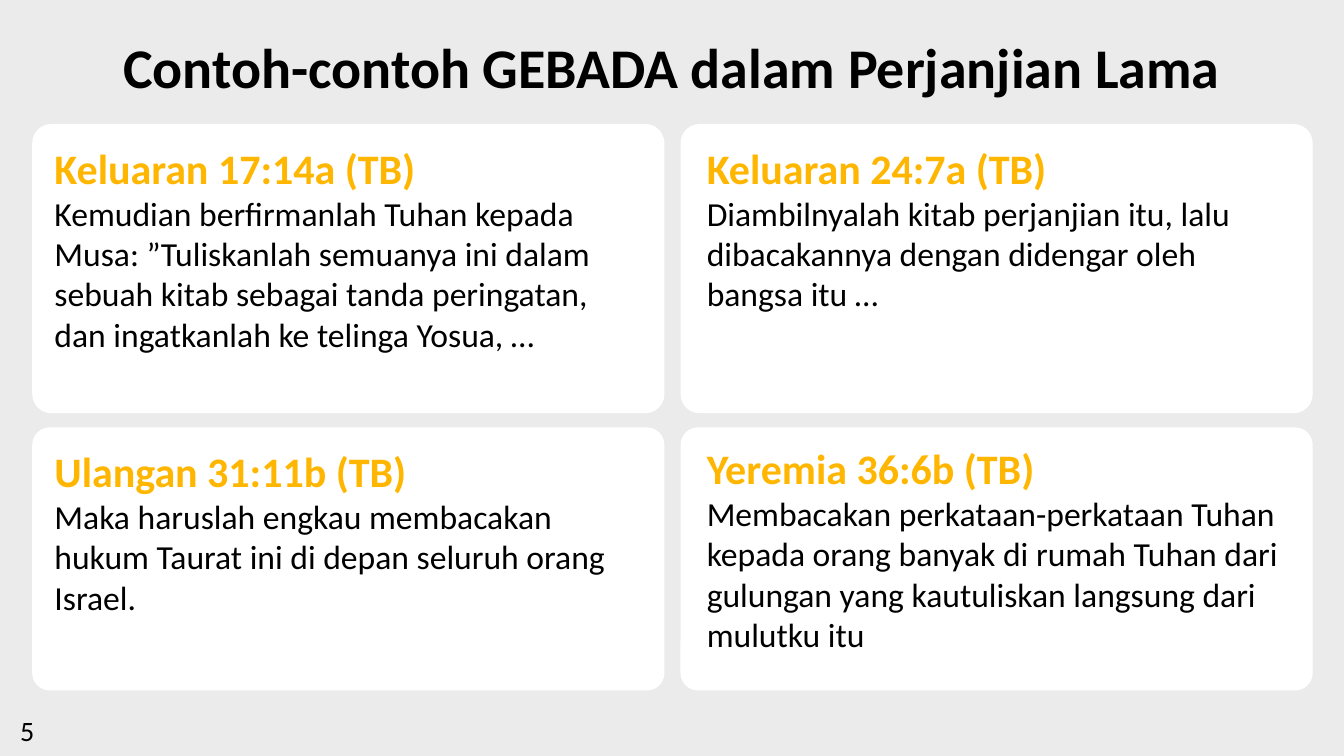
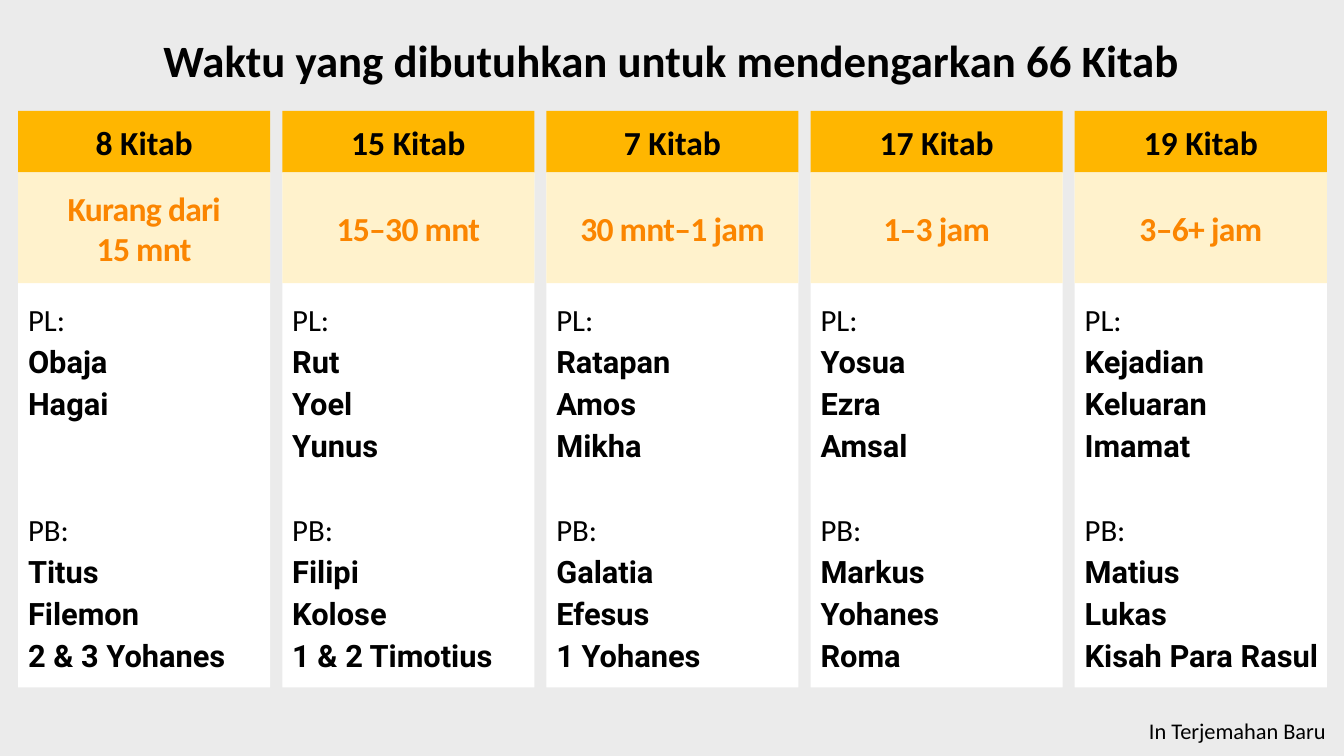
"""Build two slides on hearing Scripture: Old Testament examples and listening times."""
import dataclasses

import pptx
import pptx.dml.color
import pptx.enum.shapes
import pptx.enum.text
import pptx.util

Inches = pptx.util.Inches
Pt = pptx.util.Pt
Align = pptx.enum.text.PP_ALIGN
Anchor = pptx.enum.text.MSO_ANCHOR
Shape = pptx.enum.shapes.MSO_SHAPE


@dataclasses.dataclass(frozen=True)
class Theme:
    font: str = "Calibri"
    book_font: str = "Roboto"
    background: str = "EBEBEB"
    card: str = "FFFFFF"
    ink: str = "000000"
    gold: str = "FFB600"
    cream: str = "FFF2CC"
    orange: str = "FB8500"
    title_size: int = 40
    small_title_size: int = 32
    reference_size: int = 30
    body_size: int = 24
    book_size: int = 22
    page_size: int = 20
    note_size: int = 16
    book_line: int = 30
    note_line: int = 36


class Deck:
    def __init__(self, theme):
        self.theme = theme
        self.presentation = pptx.Presentation()
        self.presentation.slide_width = Inches(13.33)
        self.presentation.slide_height = Inches(7.5)
        self.slide = None

    def color(self, value):
        return pptx.dml.color.RGBColor.from_string(value)

    def new_slide(self, title, size):
        self.slide = self.presentation.slides.add_slide(self.presentation.slide_layouts[6])
        background = self.slide.background.fill
        background.solid()
        background.fore_color.rgb = self.color(self.theme.background)
        heading = self.text_frame(0.25, 0.32, 12.82, size / 60)
        self.paragraph(heading, title, size, bold=True, align=Align.CENTER)

    def panel(self, left, top, width, height, fill, rounding=0):
        preset = Shape.ROUNDED_RECTANGLE if rounding else Shape.RECTANGLE
        panel = self.slide.shapes.add_shape(
            preset, Inches(left), Inches(top), Inches(width), Inches(height))
        if rounding:
            panel.adjustments[0] = rounding
        panel.shadow.inherit = False
        panel.fill.solid()
        panel.fill.fore_color.rgb = self.color(fill)
        panel.line.fill.background()
        return panel

    def text_frame(self, left, top, width, height, indent=0):
        frame = self.slide.shapes.add_textbox(
            Inches(left), Inches(top), Inches(width), Inches(height)).text_frame
        frame.word_wrap = True
        frame.margin_left = Inches(indent)
        frame.margin_top = frame.margin_right = frame.margin_bottom = 0
        return frame

    def paragraph(self, frame, text, size, color=None, bold=False, align=Align.LEFT,
                  font=None, line=None, before=0, tracking=0):
        first = frame.paragraphs[0]
        paragraph = first if not first.runs else frame.add_paragraph()
        run = paragraph.add_run()
        run.text = text
        if tracking:
            run._r.get_or_add_rPr().set("spc", str(int(tracking * 100)))
        paragraph.alignment = align
        paragraph.font.name = font or self.theme.font
        paragraph.font.size = Pt(size)
        paragraph.font.bold = bold
        paragraph.font.color.rgb = self.color(color or self.theme.ink)
        if line:
            paragraph.line_spacing = Pt(line)
        if before:
            paragraph.space_before = Pt(before)

    def band(self, left, top, width, height, fill, lines, color, tracking=0):
        frame = self.panel(left, top, width, height, fill).text_frame
        frame.word_wrap = True
        frame.vertical_anchor = Anchor.MIDDLE
        for text in lines:
            self.paragraph(frame, text, self.theme.body_size, color, bold=True,
                           align=Align.CENTER, tracking=tracking)

    def verse_card(self, left, top, height, indent, drop, reference, verse):
        self.panel(left, top, 6.27, height, self.theme.card, rounding=0.066)
        frame = self.text_frame(left + indent, top + drop, 5.85, height - 2 * drop)
        self.paragraph(frame, reference, self.theme.reference_size, self.theme.gold, bold=True)
        self.paragraph(frame, verse, self.theme.body_size)

    def book_column(self, left, width, count, duration, old_books, new_books):
        theme = self.theme
        self.panel(left, 1.71, width, 5.11, theme.card)
        self.band(left, 1.1, width, 0.61, theme.gold, [count], theme.ink)
        self.band(left, 1.71, width, 1.1, theme.cream, duration, theme.orange, tracking=-0.5)
        frame = self.text_frame(left, 2.93, width, 3.76, indent=0.1)
        gap = theme.book_line * (4 - len(old_books))
        for label, books, before in (("PL:", old_books, 0), ("PB:", new_books, gap)):
            self.paragraph(frame, label, theme.book_size, line=theme.book_line, before=before)
            for book in books:
                self.paragraph(frame, book, theme.book_size, bold=True,
                               font=theme.book_font, line=theme.book_line)

    def page_number(self, number):
        frame = self.text_frame(0.2, 7.08, 1.11, 0.34)
        self.paragraph(frame, number, self.theme.page_size)

    def edition_note(self, text):
        frame = self.text_frame(10.16, 6.88, 2.99, 0.43)
        self.paragraph(frame, text, self.theme.note_size, align=Align.RIGHT,
                       line=self.theme.note_line)


VERSES = [
    (0.18, "Keluaran 17:14a (TB)",
     "Kemudian berfirmanlah Tuhan kepada Musa: ”Tuliskanlah semuanya ini dalam sebuah "
     "kitab sebagai tanda peringatan, dan ingatkanlah ke telinga Yosua, …"),
    (0.18, "Keluaran 24:7a (TB)",
     "Diambilnyalah kitab perjanjian itu, lalu dibacakannya dengan didengar oleh bangsa itu …"),
    (0.18, "Ulangan 31:11b (TB)",
     "Maka haruslah engkau membacakan hukum Taurat ini di depan seluruh orang Israel."),
    (0.15, "Yeremia 36:6b (TB)",
     "Membacakan perkataan-perkataan Tuhan kepada orang banyak di rumah Tuhan dari gulungan "
     "yang kautuliskan langsung dari mulutku itu"),
]

LISTENING_TIMES = [
    ("8 Kitab", ["Kurang dari", "15 mnt"],
     ["Obaja", "Hagai"], ["Titus", "Filemon", "2 & 3 Yohanes"]),
    ("15 Kitab", ["15–30 mnt"],
     ["Rut", "Yoel", "Yunus"], ["Filipi", "Kolose", "1 & 2 Timotius"]),
    ("7 Kitab", ["30 mnt–1 jam"],
     ["Ratapan", "Amos", "Mikha"], ["Galatia", "Efesus", "1 Yohanes"]),
    ("17 Kitab", ["1–3 jam"],
     ["Yosua", "Ezra", "Amsal"], ["Markus", "Yohanes", "Roma"]),
    ("19 Kitab", ["3–6+ jam"],
     ["Kejadian", "Keluaran", "Imamat"], ["Matius", "Lukas", "Kisah Para Rasul"]),
]


def build_examples(deck):
    deck.new_slide("Contoh-contoh GEBADA dalam Perjanjian Lama", deck.theme.title_size)
    columns = [(0.32, 0.22), (6.75, 0.26)]
    rows = [(1.23, 2.87), (4.24, 2.61)]
    for index, (drop, reference, verse) in enumerate(VERSES):
        left, indent = columns[index % 2]
        top, height = rows[index // 2]
        deck.verse_card(left, top, height, indent, drop, reference, verse)
    deck.page_number("5")


def build_listening_times(deck):
    deck.new_slide("Waktu yang dibutuhkan untuk mendengarkan 66 Kitab",
                   deck.theme.small_title_size)
    margin, right, gap = 0.18, 13.16, 0.12
    width = (right - margin + gap) / len(LISTENING_TIMES) - gap
    for index, column in enumerate(LISTENING_TIMES):
        deck.book_column(margin + index * (width + gap), width, *column)
    deck.edition_note("In Terjemahan Baru")


def main():
    deck = Deck(Theme())
    build_examples(deck)
    build_listening_times(deck)
    deck.presentation.save("out.pptx")


if __name__ == "__main__":
    main()
